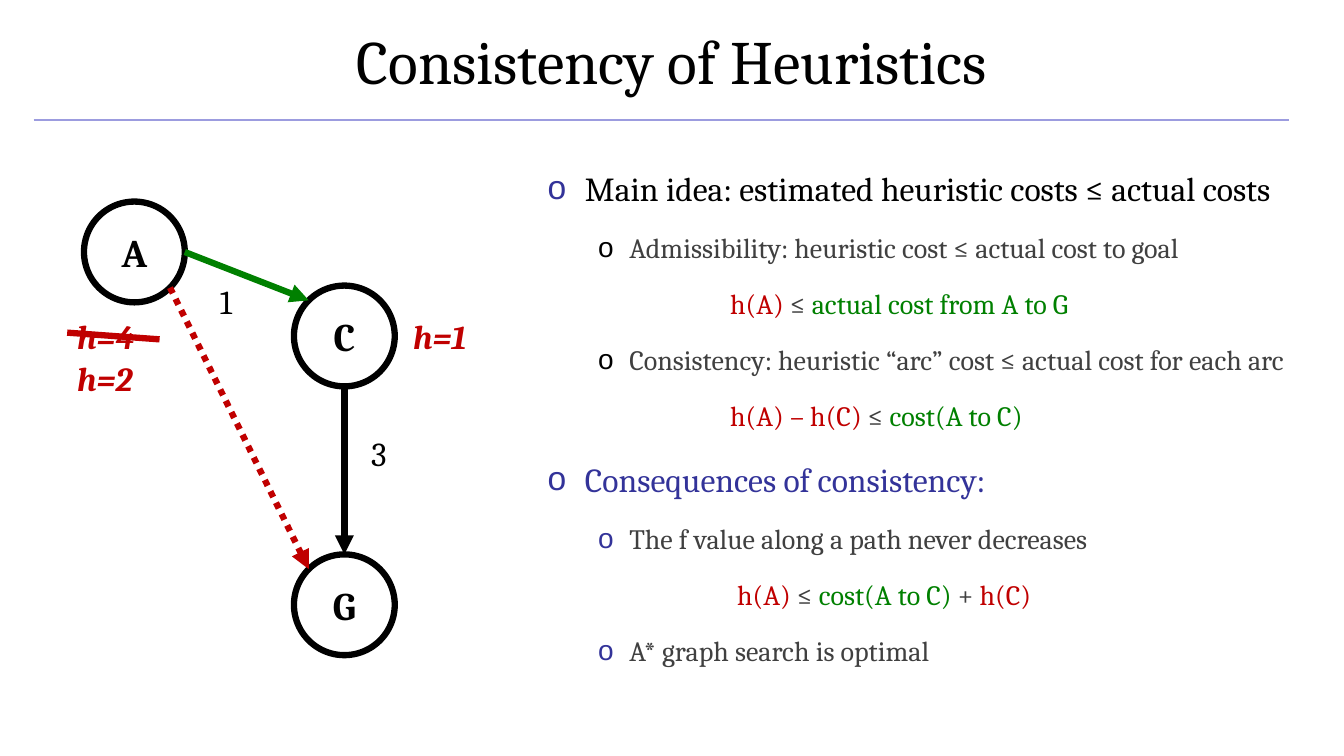
"""Build the slide on consistency of heuristics."""
from dataclasses import dataclass
from math import sqrt

from lxml.etree import SubElement
from pptx import Presentation
from pptx.dml.color import RGBColor
from pptx.enum.dml import MSO_LINE_DASH_STYLE as Dash
from pptx.enum.shapes import MSO_CONNECTOR as Connector, MSO_SHAPE as Preset
from pptx.enum.text import MSO_ANCHOR as Anchor, MSO_AUTO_SIZE as AutoSize, PP_ALIGN as Align
from pptx.oxml.ns import qn
from pptx.util import Inches, Pt

FONT = "Cambria"
COLORS = {"black": "000000", "white": "FFFFFF", "gray": "404040", "red": "C00000",
          "green": "008000", "blue": "333399", "rule": "9C9CDF"}
COLUMNS, ROWS = 160, 90
NODE_SIZE = 12
RADIUS = NODE_SIZE / 2
DIAGONAL = RADIUS / sqrt(2)


@dataclass(frozen=True)
class Node:
    name: str
    x: float
    y: float

    def at(self, dx: float, dy: float) -> tuple[float, float]:
        return self.x + dx, self.y + dy


@dataclass(frozen=True)
class Label:
    text: str
    column: float
    row: float
    width: float
    color: str = "black"
    emphasis: bool = False


@dataclass(frozen=True)
class Stroke:
    start: tuple[float, float]
    end: tuple[float, float]
    color: str
    width: float = 4.5
    arrow: bool = True
    dotted: bool = False


@dataclass(frozen=True)
class Line:
    runs: tuple[tuple[str, str], ...]
    margin: float = 0.81
    hanging: float = 0.31
    size: int = 20
    bullet: str = ""


A, C, G = Node("A", 16, 30), Node("C", 41, 40), Node("G", 41, 72)
NODES = (A, C, G)
LABELS = (
    Label("3", 43, 51, 4.4),
    Label("1", 25, 32.9, 4.4),
    Label("h=4", 8, 37, 10, "red", True),
    Label("h=2", 8, 42, 10, "red", True),
    Label("h=1", 48, 37, 10, "red", True),
)
STROKES = (
    Stroke((4, 14.3), (153.4, 14.3), "rule", width=1, arrow=False),
    Stroke(C.at(0, RADIUS), G.at(0, -RADIUS), "black"),
    Stroke(A.at(DIAGONAL, DIAGONAL), G.at(-DIAGONAL, -DIAGONAL), "red", dotted=True),
    Stroke(A.at(RADIUS, 0), C.at(-DIAGONAL, -DIAGONAL), "green"),
    Stroke((8, 39.6), (19, 40.4), "red", arrow=False),
)


def heading(text: str, color: str) -> Line:
    return Line(((text, color),), 0.37, 0.37, 24, "blue")


def point(text: str, bullet: str) -> Line:
    return Line(((text, "gray"),), bullet=bullet)


def formula(*runs: tuple[str, str], margin: float = 1.81) -> Line:
    return Line(runs, margin, 0)


LINES = (
    heading("Main idea: estimated heuristic costs ≤ actual costs", "black"),
    point("Admissibility: heuristic cost ≤ actual cost to goal", "black"),
    formula(("h(A) ", "red"), ("≤ ", "gray"), ("actual cost from A to G", "green")),
    point("Consistency: heuristic “arc” cost ≤ actual cost for each arc", "black"),
    formula(("h(A) – h(C) ", "red"), ("≤ ", "gray"), ("cost(A to C)", "green")),
    heading("Consequences of consistency:", "blue"),
    point("The f value along a path never decreases", "blue"),
    formula(("h(A) ", "red"), ("≤ ", "gray"), ("cost(A to C) ", "green"),
            ("+ ", "gray"), ("h(C)", "red"), margin=1.88),
    point("A* graph search is optimal", "blue"),
)

presentation = Presentation()
presentation.slide_width, presentation.slide_height = Inches(COLUMNS / 12), Inches(ROWS / 12)
slide = presentation.slides.add_slide(presentation.slide_layouts[1])


def grid(*units: float) -> list[int]:
    return [Inches(unit / 12) for unit in units]


def rgb(name: str) -> RGBColor:
    return RGBColor.from_string(COLORS[name])


def add_text(paragraph, text: str, *, size: int, color: str = "black",
             bold: bool = False, italic: bool = False) -> None:
    run = paragraph.add_run()
    run.text = text
    font = run.font
    font.name, font.size, font.bold, font.italic = FONT, Pt(size), bold, italic
    font.color.rgb = rgb(color)


def place(shape, *box: float) -> None:
    shape.left, shape.top, shape.width, shape.height = grid(*box)


def add_stroke(stroke: Stroke) -> None:
    connector = slide.shapes.add_connector(
        Connector.STRAIGHT, *grid(*stroke.start, *stroke.end))
    line = connector.line
    line.color.rgb, line.width = rgb(stroke.color), Pt(stroke.width)
    if stroke.dotted:
        line.dash_style = Dash.ROUND_DOT
    properties = connector._element.spPr
    if stroke.arrow:
        SubElement(properties.find(qn("a:ln")), qn("a:tailEnd"), type="triangle")
    SubElement(properties, qn("a:effectLst"))


def add_node(node: Node) -> None:
    shape = slide.shapes.add_shape(
        Preset.OVAL, *grid(*node.at(-RADIUS, -RADIUS), NODE_SIZE, NODE_SIZE))
    shape.shadow.inherit = False
    shape.fill.solid()
    shape.fill.fore_color.rgb = rgb("white")
    shape.line.color.rgb, shape.line.width = rgb("black"), Pt(4.5)
    shape.text_frame.vertical_anchor = Anchor.MIDDLE
    paragraph = shape.text_frame.paragraphs[0]
    paragraph.alignment = Align.CENTER
    add_text(paragraph, node.name, size=28, bold=True)


def add_label(label: Label) -> None:
    box = slide.shapes.add_textbox(*grid(label.column, label.row, label.width, 6))
    box.text_frame.word_wrap = False
    box.text_frame.auto_size = AutoSize.SHAPE_TO_FIT_TEXT
    add_text(box.text_frame.paragraphs[0], label.text, size=24, color=label.color,
             bold=label.emphasis, italic=label.emphasis)


def fill_line(paragraph, line: Line, first: bool) -> None:
    paragraph.level = 0 if line.size == 24 else 1
    properties = paragraph._p.get_or_add_pPr()
    properties.set("marL", str(Inches(line.margin)))
    properties.set("indent", str(-Inches(line.hanging)))
    if line.bullet:
        color = SubElement(properties, qn("a:buClr"))
        SubElement(color, qn("a:srgbClr"), val=COLORS[line.bullet])
        SubElement(properties, qn("a:buFont"), typeface="Arial")
        SubElement(properties, qn("a:buChar"), char="o")
    else:
        SubElement(properties, qn("a:buNone"))
    paragraph.line_spacing = 1.5
    paragraph.space_before = Pt(0 if first else line.size * 0.2)
    for text, color in line.runs:
        add_text(paragraph, text, size=line.size, color=color)


def main() -> None:
    title, body = slide.shapes.title, slide.placeholders[1]
    place(title, 0, -0.4, COLUMNS, 15)
    title.text_frame.vertical_anchor = Anchor.MIDDLE
    title.text_frame.paragraphs[0].alignment = Align.CENTER
    add_text(title.text_frame.paragraphs[0], "Consistency of Heuristics", size=44)
    place(body, 64, 17, 96, 40)
    frame = body.text_frame
    frame.auto_size, frame.vertical_anchor = AutoSize.NONE, Anchor.TOP
    for index, line in enumerate(LINES):
        paragraph = frame.add_paragraph() if index else frame.paragraphs[0]
        fill_line(paragraph, line, first=index == 0)
    for node in NODES:
        add_node(node)
    for label in LABELS:
        add_label(label)
    for stroke in STROKES:
        add_stroke(stroke)
    presentation.save("out.pptx")


if __name__ == "__main__":
    main()
